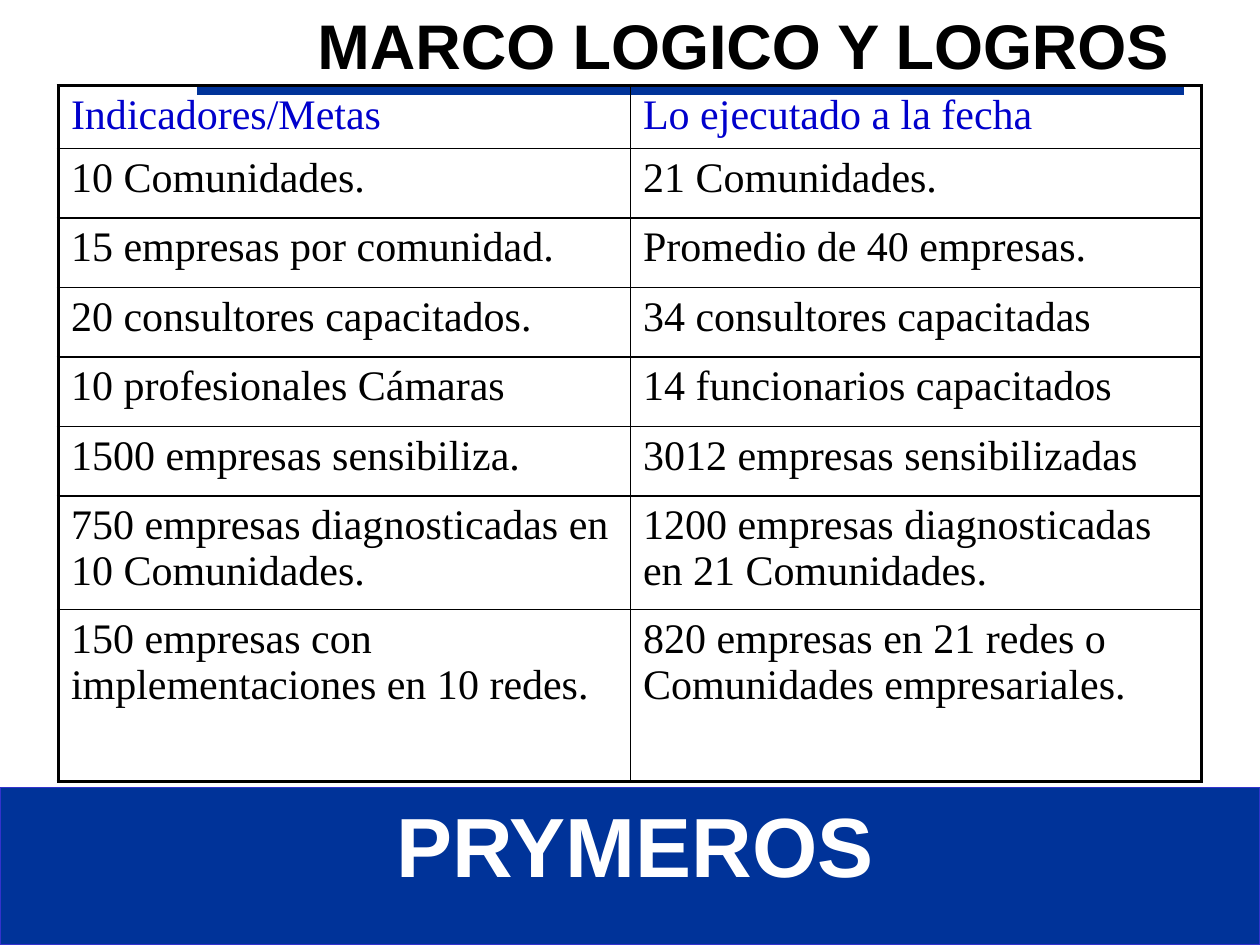
"""Build the slide comparing the logical framework's targets with its achievements."""
from lxml.etree import SubElement
from pptx import Presentation
from pptx.dml.color import RGBColor
from pptx.enum.shapes import MSO_CONNECTOR as CONNECTOR, MSO_SHAPE as SHAPE
from pptx.enum.text import MSO_ANCHOR as ANCHOR, MSO_AUTO_SIZE as AUTO_SIZE, PP_ALIGN as ALIGN
from pptx.oxml.ns import qn
from pptx.util import Pt

COLORS = {"black": "000000", "white": "FFFFFF", "navy": "003399", "edge": "3333CC", "heading": "0000CC"}
ROWS = [
    ("Indicadores/Metas", "Lo ejecutado a la fecha"),
    ("10 Comunidades.", "21 Comunidades."),
    ("15 empresas por comunidad.", "Promedio de 40 empresas."),
    ("20 consultores capacitados.", "34 consultores capacitadas"),
    ("10 profesionales Cámaras", "14 funcionarios capacitados"),
    ("1500 empresas sensibiliza.", "3012 empresas sensibilizadas"),
    ("750 empresas diagnosticadas en 10 Comunidades.", "1200 empresas diagnosticadas en 21 Comunidades."),
    ("150 empresas con implementaciones en 10 redes.", "820 empresas en 21 redes o Comunidades empresariales."),
]
ROW_HEIGHTS = [36] + [39.7] * 5 + [64.6, 98.3]
COLUMN_WIDTHS = [326.9, 326.2]


def color(name):
    return RGBColor.from_string(COLORS[name])


def write(frame, text, align, **font_values):
    frame.text = text
    paragraph = frame.paragraphs[0]
    paragraph.alignment = align
    font = paragraph.runs[0].font
    font.color.rgb = color(font_values.pop("ink"))
    for name, value in font_values.items():
        setattr(font, name, value)


prs = Presentation()
prs.slide_width, prs.slide_height = Pt(720), Pt(540)
slide = prs.slides.add_slide(prs.slide_layouts[5])
shapes = slide.shapes

rule = shapes.add_connector(CONNECTOR.STRAIGHT, Pt(112.5), Pt(52), Pt(676.8), Pt(52))
rule.line.color.rgb = color("navy")
rule.line.width = Pt(4.5)
SubElement(rule._element.spPr, qn("a:effectLst"))

heading = shapes.title
heading.left, heading.top, heading.width, heading.height = Pt(174.2), Pt(0), Pt(502.6), Pt(50.4)
write(heading.text_frame, "MARCO LOGICO Y LOGROS", ALIGN.LEFT,
      ink="black", name="Arial", size=Pt(36), bold=True)

band = shapes.add_shape(SHAPE.RECTANGLE, Pt(0), Pt(450), Pt(720), Pt(90))
band.shadow.inherit = False
band.fill.solid()
band.fill.fore_color.rgb = color("navy")
band.line.color.rgb = color("edge")
band.line.width = Pt(0.75)

program = shapes.add_textbox(Pt(218.2), Pt(450), Pt(289.4), Pt(64.8))
write(program.text_frame, "PRYMEROS", ALIGN.CENTER,
      ink="white", name="Arial", size=Pt(48), bold=True)

for frame in (heading.text_frame, program.text_frame):
    frame.word_wrap = False
    frame.auto_size = AUTO_SIZE.SHAPE_TO_FIT_TEXT
    frame.vertical_anchor = ANCHOR.TOP

achievements = shapes.add_table(len(ROWS), 2, Pt(33.4), Pt(48.9),
                                Pt(sum(COLUMN_WIDTHS)), Pt(sum(ROW_HEIGHTS))).table
achievements.first_row = achievements.horz_banding = False
for column, width in zip(achievements.columns, COLUMN_WIDTHS):
    column.width = Pt(width)
for row, height in zip(achievements.rows, ROW_HEIGHTS):
    row.height = Pt(height)

last_row = len(ROWS) - 1
for r, texts in enumerate(ROWS):
    for c, text in enumerate(texts):
        cell = achievements.cell(r, c)
        write(cell.text_frame, text, ALIGN.LEFT, ink="black" if r else "heading",
              name="Times New Roman", size=Pt(24), bold=False)
        properties = cell._tc.get_or_add_tcPr()
        outer_sides = {"L": c == 0, "R": c == 1, "T": r == 0, "B": r == last_row}
        for side, is_outer in outer_sides.items():
            border = SubElement(properties, qn(f"a:ln{side}"), w=str(Pt(2.25 if is_outer else 1)))
            ink = SubElement(border, qn("a:solidFill"))
            SubElement(ink, qn("a:srgbClr"), val=COLORS["black"])
        cell.fill.background()

prs.save("out.pptx")
